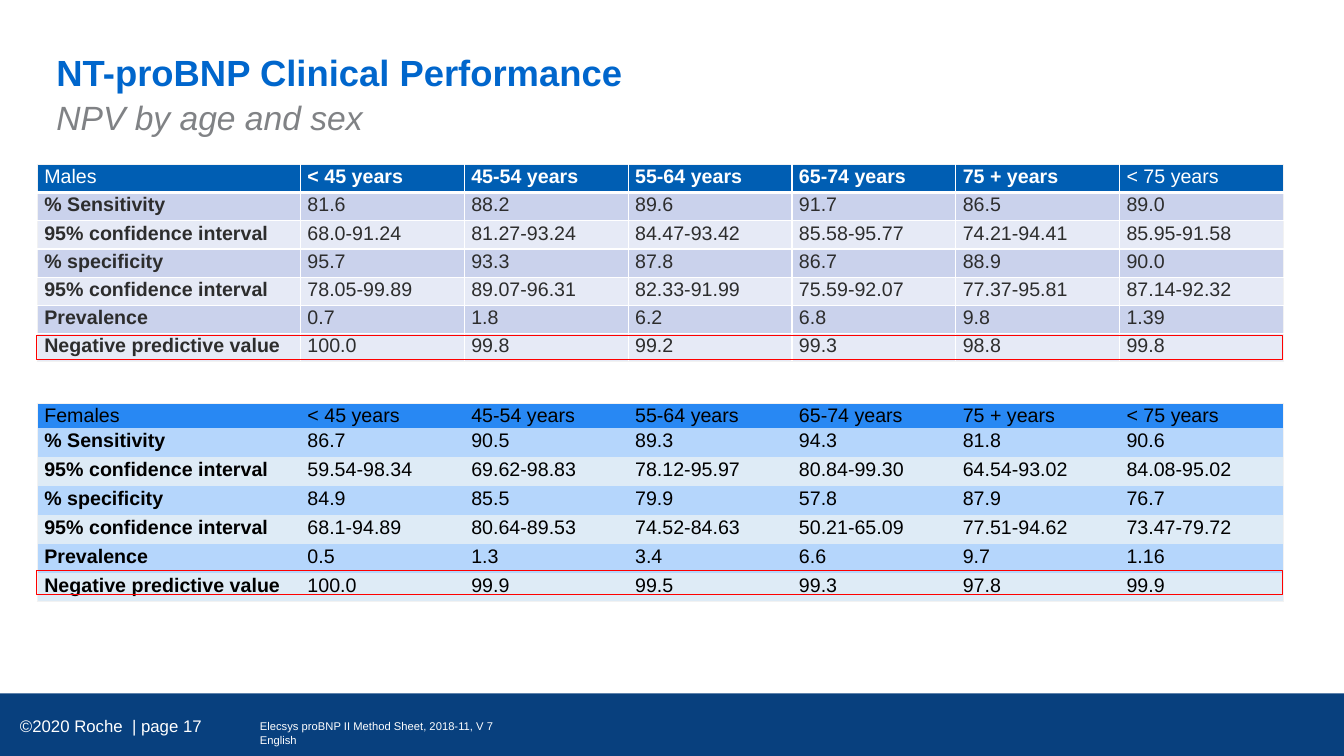
from lxml import etree
from pptx import Presentation
from pptx import util as u
from pptx.dml.color import RGBColor
from pptx.enum import shapes, text
from pptx.oxml import ns

THEME = {
    "font": "Arial", "white": "FFFFFF", "footer": "08407E", "highlight": "FF0000",
    "edge": "F2F2F2", "title": "0066CC", "subtitle": "808285",
    "title_size": 26, "subtitle_size": 24, "table_size": 14, "page_size": 12, "source_size": 8,
}
AGES = ["< 45 years", "45-54 years", "55-64 years", "65-74 years", "75 + years", "< 75 years"]
MEASURES = ["% Sensitivity", "95% confidence interval", "% specificity",
            "95% confidence interval", "Prevalence", "Negative predictive value"]
TABLES = [
    {"sex": "Males", "top": 1.63, "header_height": 0.28, "header": "005EB3",
     "header_ink": "FFFFFF", "ink": "2D2D2D", "bands": ["CAD2EC", "E6EAF6"],
     "bold_headers": range(1, 6), "grid": True, "highlight_top": 3.33,
     "values": [
         ["81.6", "88.2", "89.6", "91.7", "86.5", "89.0"],
         ["68.0-91.24", "81.27-93.24", "84.47-93.42", "85.58-95.77", "74.21-94.41", "85.95-91.58"],
         ["95.7", "93.3", "87.8", "86.7", "88.9", "90.0"],
         ["78.05-99.89", "89.07-96.31", "82.33-91.99", "75.59-92.07", "77.37-95.81", "87.14-92.32"],
         ["0.7", "1.8", "6.2", "6.8", "9.8", "1.39"],
         ["100.0", "99.8", "99.2", "99.3", "98.8", "99.8"]]},
    {"sex": "Females", "top": 4, "header_height": 0.24, "header": "2888F3",
     "header_ink": "000000", "ink": "000000", "bands": ["B5D6FC", "DEEBF6"],
     "bold_headers": [], "grid": False, "highlight_top": 5.66,
     "values": [
         ["86.7", "90.5", "89.3", "94.3", "81.8", "90.6"],
         ["59.54-98.34", "69.62-98.83", "78.12-95.97", "80.84-99.30", "64.54-93.02", "84.08-95.02"],
         ["84.9", "85.5", "79.9", "57.8", "87.9", "76.7"],
         ["68.1-94.89", "80.64-89.53", "74.52-84.63", "50.21-65.09", "77.51-94.62", "73.47-79.72"],
         ["0.5", "1.3", "3.4", "6.6", "9.7", "1.16"],
         ["100.0", "99.9", "99.5", "99.3", "97.8", "99.9"]]},
]
INSET = (0.1, 0.05, 0.1, 0.05)
TEXTS = [
    ("©2020 Roche  | page 17", (0.1, 7, 3.57, 0.4), INSET, "page_size", "white",
     {}, text.MSO_ANCHOR.MIDDLE),
    ("NT-proBNP Clinical Performance", (0.56, 0.5, 11.36, 0.45), (0, 0, 0, 0),
     "title_size", "title", {"bold": True}, text.MSO_ANCHOR.TOP),
    ("NPV by age and sex", (0.56, 0.96, 11.36, 0.94), (0, 0, 0, 0),
     "subtitle_size", "subtitle", {"italic": True}, text.MSO_ANCHOR.TOP),
    ("Elecsys proBNP II Method Sheet, 2018-11, V 7 English", (2.48, 7.09, 2.73, 0.37), INSET,
     "source_size", "white", {}, text.MSO_ANCHOR.TOP),
]
TABLE_LEFT, TABLE_WIDTH, TABLE_HEIGHT, LABEL_WIDTH = 0.37, 12.36, 1.96, 2.61
PLAIN_STYLE = "{2D5ABB26-0587-4C30-8999-92F81FD0307C}"


def set_values(target, values):
    for name, value in values.items():
        setattr(target, name, value)


def write(frame, words, size, color, style):
    paragraph = frame.paragraphs[0]
    run = paragraph.add_run()
    run.text = words
    set_values(run.font, {"name": THEME["font"], "size": u.Pt(size), **style})
    run.font.color.rgb = RGBColor.from_string(color)
    return paragraph


def add_text(slide, words, box, inset, size, color, style, anchor):
    frame = slide.shapes.add_textbox(*map(u.Inches, box)).text_frame
    sides = ("margin_left", "margin_top", "margin_right", "margin_bottom")
    set_values(frame, {"word_wrap": True, "vertical_anchor": anchor,
                       **dict(zip(sides, map(u.Inches, inset)))})
    write(frame, words, THEME[size], THEME[color], style)


def add_rectangle(slide, box, fill=None, line=None):
    shape = slide.shapes.add_shape(shapes.MSO_SHAPE.RECTANGLE, *map(u.Inches, box))
    shape.shadow.inherit = False
    for part, color in ((shape.fill, fill), (shape.line.fill, line)):
        if color:
            part.solid()
            part.fore_color.rgb = RGBColor.from_string(color)
        else:
            part.background()
    if line:
        shape.line.width = u.Pt(0.75)


def set_borders(cell, row, column, grid):
    last_row, last_column = len(MEASURES), len(AGES)
    outer = {"L": column == 0, "R": column == last_column, "T": row == 0, "B": row == last_row}
    for side, on_edge in outer.items():
        if not (on_edge or grid):
            continue
        under_header = (row, side) in ((0, "B"), (1, "T"))
        width = 0.75 if on_edge else 3 if under_header else 1
        border = etree.SubElement(cell._tc.get_or_add_tcPr(), ns.qn("a:ln" + side),
                                  w=str(u.Pt(width)))
        fill = etree.SubElement(border, ns.qn("a:solidFill"))
        etree.SubElement(fill, ns.qn("a:srgbClr"), val=THEME["edge" if on_edge else "white"])


def add_sex_table(slide, data):
    rows = [[data["sex"], *AGES]]
    rows += [[measure, *values] for measure, values in zip(MEASURES, data["values"])]
    box = (TABLE_LEFT, data["top"], TABLE_WIDTH, TABLE_HEIGHT)
    table = slide.shapes.add_table(len(rows), len(rows[0]), *map(u.Inches, box)).table
    table._tbl.tblPr.find(ns.qn("a:tableStyleId")).text = PLAIN_STYLE
    age_width = (TABLE_WIDTH - LABEL_WIDTH) / len(AGES)
    row_height = (TABLE_HEIGHT - data["header_height"]) / len(MEASURES)
    for index, column in enumerate(table.columns):
        column.width = u.Inches(age_width if index else LABEL_WIDTH)
    for r, words in enumerate(rows):
        table.rows[r].height = u.Inches(row_height if r else data["header_height"])
        for c, word in enumerate(words):
            cell = table.cell(r, c)
            set_borders(cell, r, c, data["grid"])
            set_values(cell, {"margin_left": u.Inches(0.07), "margin_right": u.Inches(0.07),
                              "margin_top": 0, "margin_bottom": 0})
            cell.fill.solid()
            color = data["bands"][(r - 1) % 2] if r else data["header"]
            cell.fill.fore_color.rgb = RGBColor.from_string(color)
            bold = c == 0 if r else c in data["bold_headers"]
            ink = data["ink"] if r else data["header_ink"]
            paragraph = write(cell.text_frame, word, THEME["table_size"], ink, {"bold": bold})
            paragraph.line_spacing = 1.07


def main():
    presentation = Presentation()
    set_values(presentation, {"slide_width": u.Inches(13.33), "slide_height": u.Inches(7.5)})
    slide = presentation.slides.add_slide(presentation.slide_layouts[6])
    add_rectangle(slide, (0, 6.88, 13.33, 0.62), fill=THEME["footer"])
    for item in TEXTS:
        add_text(slide, *item)
    for data in TABLES:
        add_sex_table(slide, data)
    for data in TABLES:
        add_rectangle(slide, (0.36, data["highlight_top"], 12.36, 0.24), line=THEME["highlight"])
    presentation.save("out.pptx")


if __name__ == "__main__":
    main()
